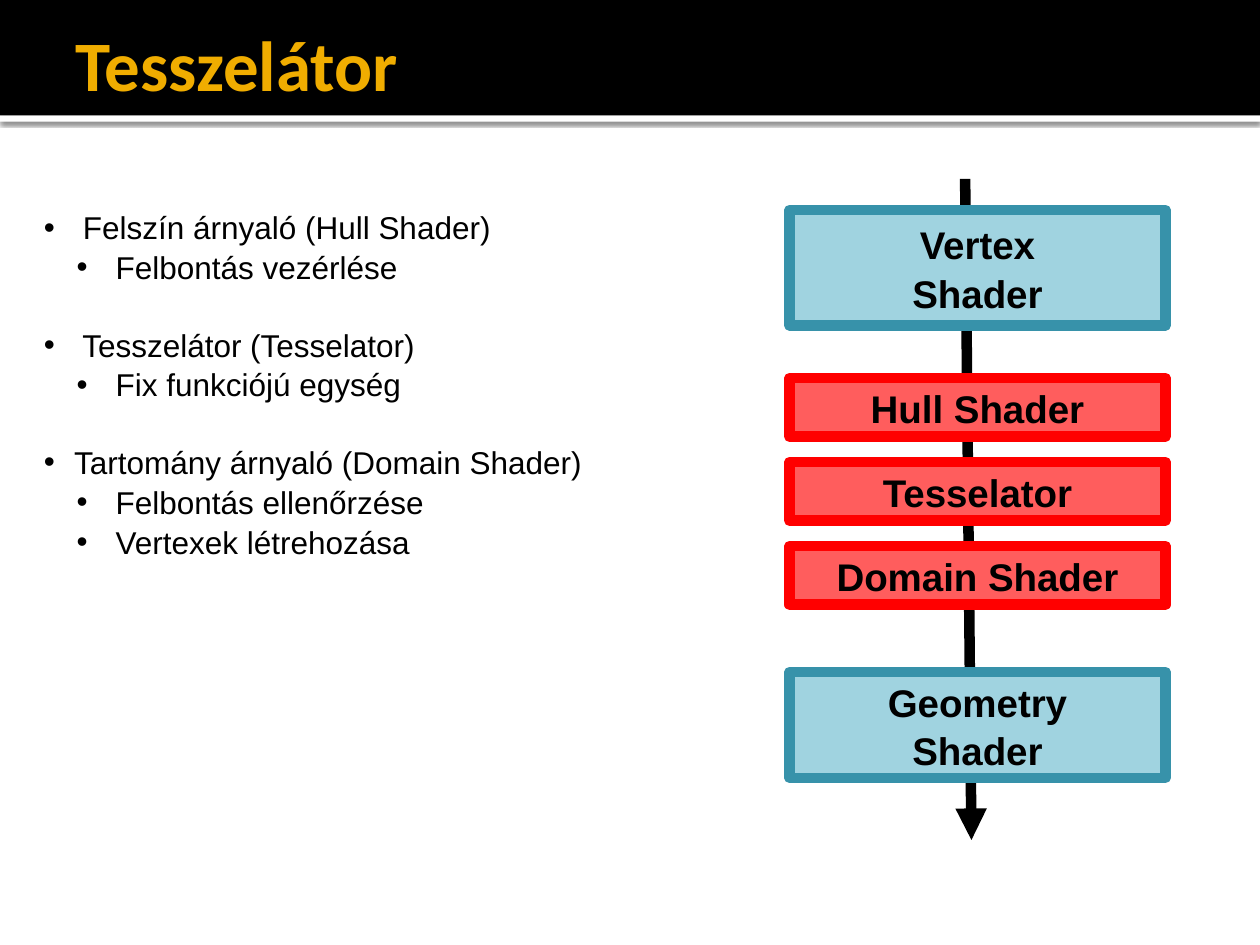
from lxml.etree import SubElement
from pptx import Presentation
from pptx.dml.color import RGBColor
from pptx.enum.shapes import MSO_CONNECTOR as LINE, MSO_SHAPE as SHAPE
from pptx.enum.text import MSO_ANCHOR as ANCHOR, PP_ALIGN as ALIGN
from pptx.oxml.ns import qn
from pptx.util import Inches, Pt

COLS = 30


def rgb(value):
    return RGBColor.from_string(value)


def assign(target, values):
    for name, value in values.items():
        setattr(target, name, value)


class Deck:
    title_font = dict(name="Calibri", size=Pt(40.5), bold=True)
    block_font = dict(name="Arial", size=Pt(22), bold=True)
    list_font = dict(name="Arial", size=Pt(18), bold=False)
    ink, accent = "000000", "F0AD00"

    def __init__(self):
        self.prs = Presentation()
        assign(self.prs, dict(slide_width=Inches(10), slide_height=Inches(7.5)))
        self.s = self.prs.slides.add_slide(self.prs.slide_layouts[5])

    def grid(self, *cells):
        return [round(c * self.prs.slide_width / COLS) for c in cells]

    def label(self, p, text, font, color):
        r = p.add_run()
        r.text = text
        assign(r.font, font)
        r.font.color.rgb = rgb(color)

    def rect(self, box, fill, line=None):
        sp = self.s.shapes.add_shape(SHAPE.RECTANGLE, *self.grid(*box))
        sp.shadow.inherit = False
        sp.fill.solid()
        sp.fill.fore_color.rgb = rgb(fill)
        if line:
            sp.line.color.rgb = rgb(line)
            sp.line.width = Pt(6)
        else:
            sp.line.fill.background()
        return sp

    def cast_shadow(self, sp):
        effects = sp._element.spPr.find(qn("a:effectLst"))
        shadow = SubElement(effects, qn("a:outerShdw"), blurRad=str(Pt(2.5)),
                            dist=str(Pt(0.8)), dir="5400000", algn="tl", rotWithShape="0")
        color = SubElement(shadow, qn("a:srgbClr"), val=self.ink)
        SubElement(color, qn("a:alpha"), val="60000")

    def title(self, text, box):
        sp = self.s.shapes.title
        self.s.shapes._spTree.append(sp._element)
        assign(sp, dict(zip(("left", "top", "width", "height"), self.grid(*box))))
        tf = sp.text_frame
        assign(tf, dict(vertical_anchor=ANCHOR.MIDDLE, margin_right=Inches(0.05)))
        p = tf.paragraphs[0]
        p.alignment = ALIGN.LEFT
        self.label(p, text, self.title_font, self.accent)

    def arrow(self, start, end):
        line = self.s.shapes.add_connector(LINE.STRAIGHT, *self.grid(*start, *end))
        line.line.color.rgb = rgb(self.ink)
        line.line.width = Pt(6)
        spPr = line._element.spPr
        SubElement(spPr.find(qn("a:ln")), qn("a:tailEnd"), type="triangle")
        SubElement(spPr, qn("a:effectLst"))

    def block(self, lines, box, fill, line):
        tf = self.rect(box, fill, line).text_frame
        assign(tf, dict(vertical_anchor=ANCHOR.MIDDLE, word_wrap=True))
        for i, text in enumerate(lines):
            p = tf.add_paragraph() if i else tf.paragraphs[0]
            assign(p, dict(alignment=ALIGN.CENTER, line_spacing=1.04))
            self.label(p, text, self.block_font, self.ink)

    def bullets(self, items, box):
        tf = self.s.shapes.add_textbox(*self.grid(*box)).text_frame
        tf.word_wrap = True
        for i, (level, text) in enumerate(items):
            p = tf.add_paragraph() if i else tf.paragraphs[0]
            gap = Pt(21.7) if i and level == 0 else Pt(0)
            assign(p, dict(level=level, line_spacing=1.05, space_before=gap))
            pPr = p._p.get_or_add_pPr()
            pPr.set("marL", str(Inches(0.5 if level else 0.24)))
            pPr.set("indent", str(-Inches(0.24)))
            SubElement(pPr, qn("a:buFont"), typeface="Arial")
            SubElement(pPr, qn("a:buChar"), char="•")
            self.label(p, text, self.list_font, self.ink)


def main():
    deck = Deck()
    deck.cast_shadow(deck.rect((0, 2.75, COLS, 0.15), "FFFFFF"))
    deck.rect((0, 0, COLS, 2.75), "000000")
    deck.title("Tesszelátor", (1.5, 0.25, 27, 2.5))
    deck.arrow((22.98, 4.26), (23.13, 20))

    blue, red = ("A0D3E0", "3792AA"), ("FF5D5D", "FF0000")
    stages = [
        (("Vertex", "Shader"), 5, 2.75, blue),
        (("Hull Shader",), 9, 1.4, red),
        (("Tesselator",), 11, 1.4, red),
        (("Domain Shader",), 13, 1.4, red),
        (("Geometry", "Shader"), 16, 2.52, blue),
    ]
    for lines, row, height, colors in stages:
        deck.block(lines, (18.8, row, 8.95, height), *colors)

    deck.bullets([
        (0, " Felszín árnyaló (Hull Shader)"),
        (1, " Felbontás vezérlése"),
        (0, " Tesszelátor (Tesselator)"),
        (1, " Fix funkciójú egység"),
        (0, "Tartomány árnyaló (Domain Shader)"),
        (1, " Felbontás ellenőrzése"),
        (1, " Vertexek létrehozása"),
    ], (0.75, 4.77, 17, 8.5))
    deck.prs.save("out.pptx")


if __name__ == "__main__":
    main()
